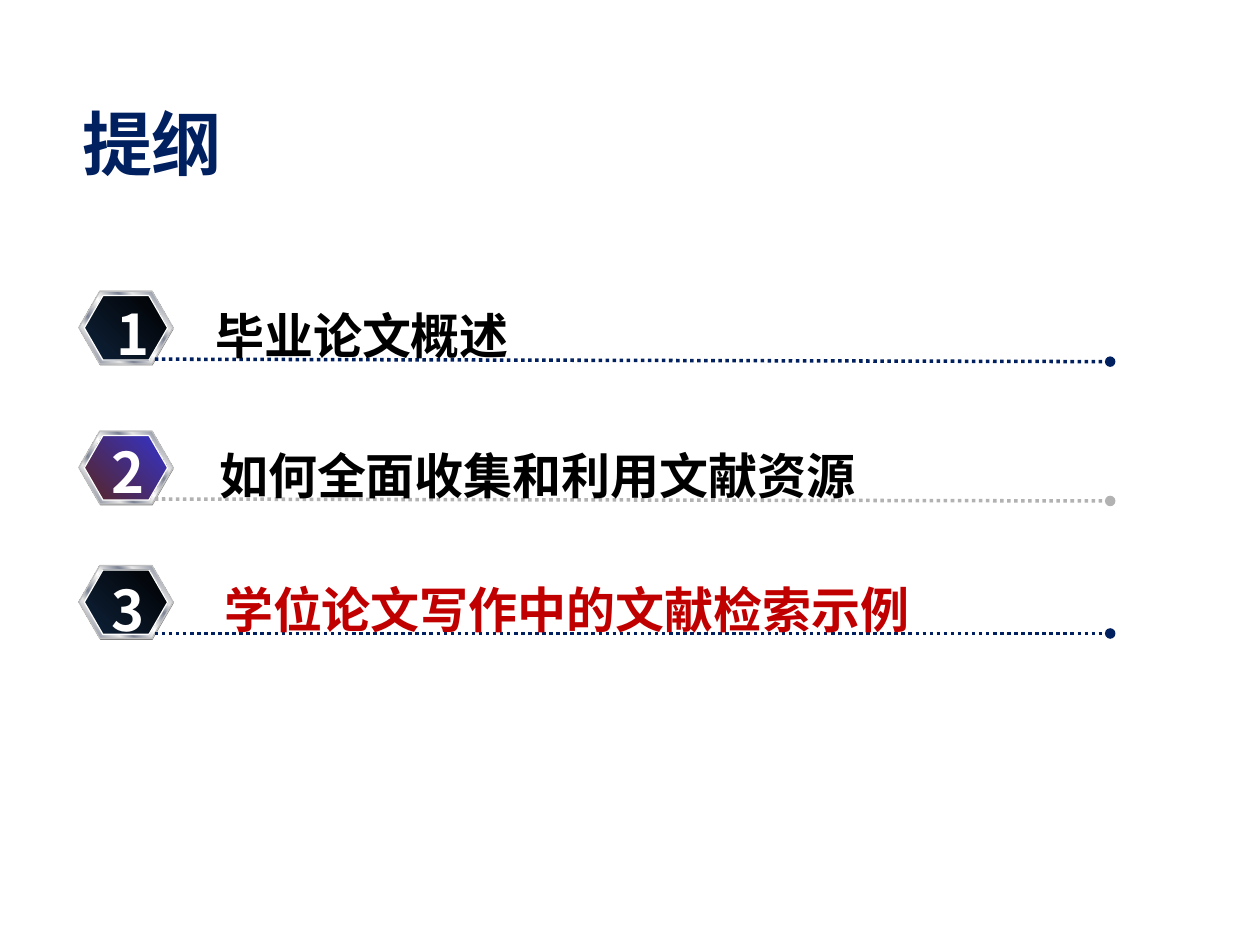
from lxml import etree
from pptx import Presentation
from pptx.dml.color import RGBColor
from pptx.enum import dml, shapes, text
from pptx.oxml.ns import qn
from pptx.util import Cm, Pt

NAVY = RGBColor(0x00, 0x20, 0x60)
BLACK = RGBColor(0, 0, 0)
WHITE = RGBColor(0xFF, 0xFF, 0xFF)
RED = RGBColor(0xC0, 0x00, 0x00)
GRAY = RGBColor(0x80, 0x80, 0x80)
SILVER = RGBColor(0xC0, 0xC0, 0xC0)
ASH = RGBColor(0xB2, 0xB2, 0xB2)
LIGHT = RGBColor(0xE6, 0xE6, 0xE6)
STEEL = RGBColor(0x7D, 0x84, 0x96)
INK = RGBColor(0x0E, 0x22, 0x3A)
WINE = RGBColor(0x59, 0x25, 0x24)
BLUE = RGBColor(0x33, 0x33, 0xCC)

CJK = "Noto Sans CJK SC"
TITLE = "提纲"
METAL = [(0, LIGHT), (8, STEEL), (26, LIGHT), (34, STEEL), (46, LIGHT), (50, WHITE),
         (54, LIGHT), (66, STEEL), (74, LIGHT), (92, STEEL), (100, LIGHT)]
DARK = [(0, INK), (100, BLACK)]
VIVID = [(0, WINE), (100, BLUE)]

# top, number, number left, number drop, label, label left, label width, colour, core, rule, slope
FIELDS = ("top", "num", "num_x", "num_dy", "label", "x", "wide", "color", "core", "rule", "slope")
ROWS = [dict(zip(FIELDS, row)) for row in [
    (5.87, "1", 2.08, 0.05, "毕业论文概述", 4.09, 6.5, BLACK, DARK, NAVY, 0.05),
    (8.69, "2", 1.98, 0, "如何全面收集和利用文献资源", 4.17, 13.49, BLACK, VIVID, ASH, 0.04),
    (11.4, "3", 1.98, 0.08, "学位论文写作中的文献检索示例", 4.27, 14.48, RED, DARK, NAVY, 0),
]]


def style(frame, size, color, font=CJK):
    for run in frame.paragraphs[0].runs:
        run.font.size = Pt(size)
        run.font.bold = True
        run.font.name = font
        run.font.color.rgb = color
        east = etree.SubElement(run.font._element, qn("a:ea"))
        east.set("typeface", CJK)


def blend(shape, stops):
    shape.fill.gradient()
    shape.fill.gradient_angle = 45
    items = shape._element.find(".//" + qn("a:gsLst"))
    items.clear()
    for pos, color in stops:
        stop = etree.SubElement(items, qn("a:gs"), pos=str(pos * 1000))
        etree.SubElement(stop, qn("a:srgbClr"), val=str(color))


def hexagon(group, x, y, w, h, fill, line=None):
    shape = group.shapes.add_shape(shapes.MSO_SHAPE.HEXAGON, Cm(x), Cm(y), Cm(w), Cm(h))
    shape.adjustments[0] = 0.289
    shape.shadow.inherit = False
    if line is None:
        shape.fill.solid()
        shape.fill.fore_color.rgb = fill
        shape.line.fill.background()
    else:
        blend(shape, fill)
        shape.line.color.rgb = line
        shape.line.width = Pt(0.75)


def rule(group, y, slope, color):
    line = group.shapes.add_connector(shapes.MSO_CONNECTOR.STRAIGHT,
                                      Cm(3.12), Cm(y), Cm(22.38), Cm(y + slope))
    line.line.color.rgb = color
    line.line.width = Pt(2)
    line.line.dash_style = dml.MSO_LINE.ROUND_DOT
    etree.SubElement(line.line._get_or_add_ln(), qn("a:tailEnd"), type="oval")
    etree.SubElement(line._element.spPr, qn("a:effectLst"))


def write(group, words, x, y, w, h, size, color, align):
    box = group.shapes.add_textbox(Cm(x), Cm(y), Cm(w), Cm(h))
    frame = box.text_frame
    frame.text = words
    frame.word_wrap = False
    frame.auto_size = text.MSO_AUTO_SIZE.SHAPE_TO_FIT_TEXT
    frame.paragraphs[0].alignment = align
    style(frame, size, color)


def main():
    deck = Presentation()
    deck.slide_width, deck.slide_height = Cm(25.4), Cm(19.05)
    slide = deck.slides.add_slide(deck.slide_layouts[5])

    title = slide.shapes.title
    title.left, title.top, title.width, title.height = Cm(1.4), Cm(1.98), Cm(20.24), Cm(1.78)
    title.text_frame.text = TITLE
    title.text_frame.vertical_anchor = text.MSO_ANCHOR.MIDDLE
    title.text_frame.paragraphs[0].alignment = text.PP_ALIGN.LEFT
    style(title.text_frame, 40, NAVY, "DejaVu Sans")

    for row in ROWS:
        top = row["top"]
        group = slide.shapes.add_group_shape()
        hexagon(group, 1.6, top + 0.03, 1.9, 1.47, GRAY)
        hexagon(group, 1.59, top, 1.9, 1.47, METAL, SILVER)
        hexagon(group, 1.7, top + 0.09, 1.68, 1.3, row["core"], WHITE)
        rule(group, top + 1.37, row["slope"], row["rule"])
        write(group, row["label"], row["x"], top + 0.16, row["wide"], 1.45,
              28, row["color"], text.PP_ALIGN.LEFT)
        write(group, row["num"], row["num_x"], top + row["num_dy"], 1.22, 1.63,
              32, WHITE, text.PP_ALIGN.CENTER)

    deck.save("out.pptx")


if __name__ == "__main__":
    main()
